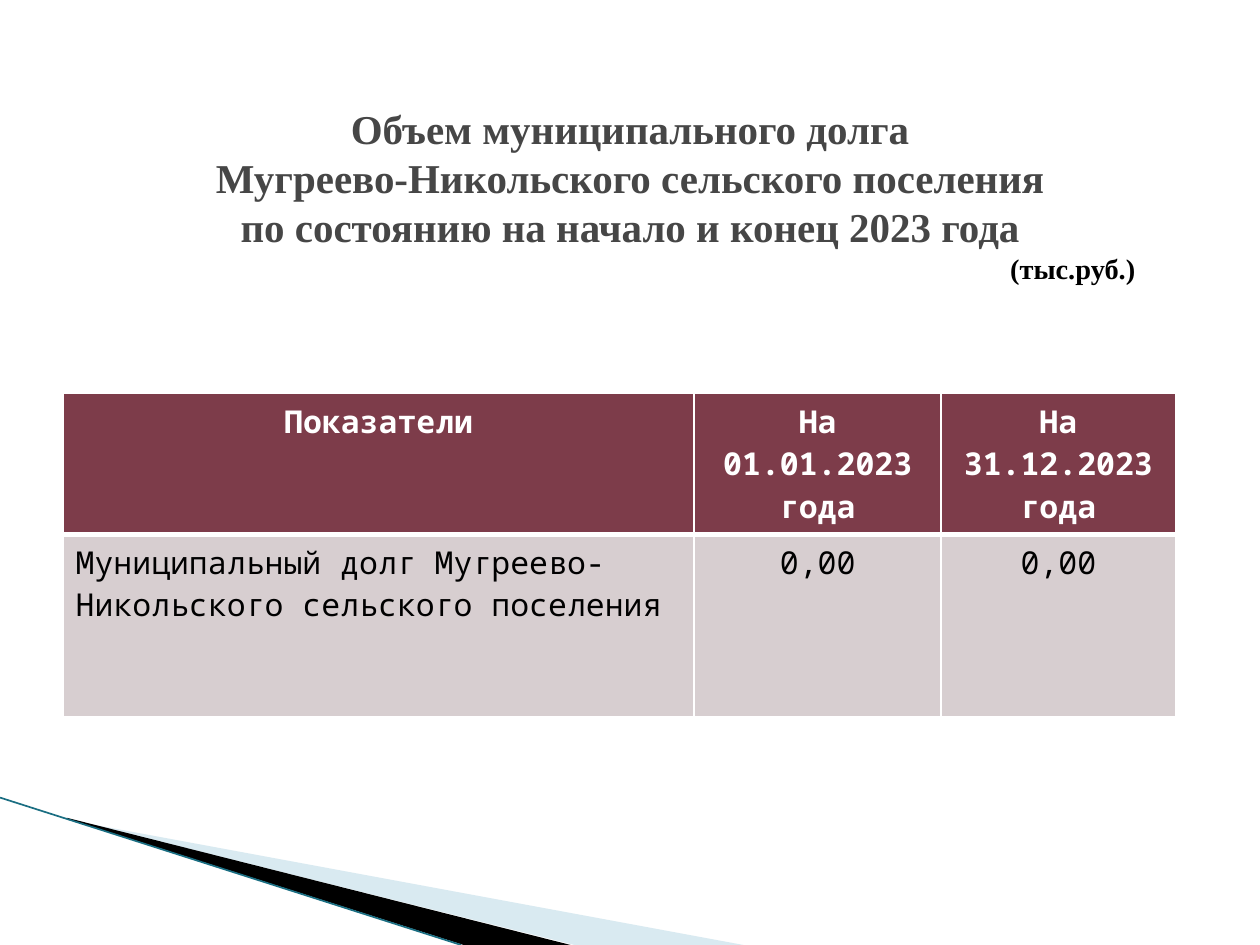
from dataclasses import dataclass

from lxml.etree import SubElement
from pptx import Presentation
from pptx.dml.color import RGBColor
from pptx.enum.shapes import MSO_CONNECTOR
from pptx.enum.text import MSO_ANCHOR, PP_ALIGN
from pptx.oxml.ns import qn
from pptx.util import Inches, Pt

SERIF, MONO = "Times New Roman", "Noto Sans Mono"
WHITE, BLACK, GREY = "FFFFFF", "000000", "464646"


@dataclass
class Wedge:
    points: list[tuple[float, float]]
    color: str
    opacity: int = 100


@dataclass
class Row:
    cells: list[str]
    height: float
    fill: str
    color: str
    bold: bool
    first_align: PP_ALIGN
    bottom_border: float


@dataclass
class TitleLine:
    text: str
    size: float = 23.4
    color: str = GREY
    align: PP_ALIGN = PP_ALIGN.CENTER


WEDGES = [
    Wedge([(0.55, 6.51), (5.9, 7.5), (4.56, 7.5), (0.55, 6.5)], "A0CBDC", 40),
    Wedge([(0.53, 6.49), (4.53, 7.5), (3.68, 7.5), (0.54, 6.5)], BLACK),
]
TITLE = [
    TitleLine("Объем муниципального долга"),
    TitleLine("Мугреево-Никольского сельского поселения"),
    TitleLine("по состоянию на начало и конец 2023 года"),
    TitleLine("(тыс.руб.)", 16.2, BLACK, PP_ALIGN.RIGHT),
]
COLUMN_WIDTHS = [5.01, 1.96, 1.86]
ROWS = [
    Row(["Показатели", "На 01.01.2023 года", "На 31.12.2023 года"],
        1.12, "7D3C4A", WHITE, True, PP_ALIGN.CENTER, 3),
    Row(["Муниципальный долг Мугреево-Никольского сельского поселения", "0,00", "0,00"],
        1.45, "D7CED0", BLACK, False, PP_ALIGN.LEFT, 1),
]


def rgb(color: str) -> RGBColor:
    return RGBColor.from_string(color)


def style(paragraph, face: str, size: float, color: str, bold: bool, align: PP_ALIGN) -> None:
    paragraph.alignment = align
    for run in paragraph.runs:
        font = run.font
        font.name, font.size, font.bold = face, Pt(size), bold
        font.color.rgb = rgb(color)


def draw_wedge(slide, wedge: Wedge) -> None:
    points = [(Inches(x), Inches(y)) for x, y in wedge.points]
    builder = slide.shapes.build_freeform(*points[0])
    builder.add_line_segments(points[1:])
    shape = builder.convert_to_shape()
    shape.shadow.inherit = False
    shape.line.fill.background()
    shape.fill.solid()
    shape.fill.fore_color.rgb = rgb(wedge.color)
    if wedge.opacity < 100:
        tint = shape.fill._xPr.find(".//" + qn("a:srgbClr"))
        SubElement(tint, qn("a:alpha"), val=str(wedge.opacity * 1000))


def draw_edge(slide) -> None:
    edge = slide.shapes.add_connector(
        MSO_CONNECTOR.STRAIGHT, Inches(0), Inches(6.33), Inches(3.66), Inches(7.5))
    edge.line.color.rgb = rgb("1A6E82")
    edge.line.width = Pt(0.95)
    SubElement(edge._element.spPr, qn("a:effectLst"))


def draw_title(slide) -> None:
    frame = slide.shapes.add_textbox(Inches(0.5), Inches(0.77), Inches(9), Inches(1.96)).text_frame
    frame.word_wrap = True
    frame.vertical_anchor = MSO_ANCHOR.TOP
    frame.margin_left = frame.margin_right = Inches(0.49)
    frame.margin_top = Inches(0.05)
    frame.text = "\n".join(line.text for line in TITLE)
    for paragraph, line in zip(frame.paragraphs, TITLE):
        style(paragraph, SERIF, line.size, line.color, True, line.align)


def set_borders(cell, bottom: float) -> None:
    properties = cell._tc.get_or_add_tcPr()
    for side, width in (("L", 1), ("R", 1), ("T", 1), ("B", bottom)):
        border = SubElement(properties, qn(f"a:ln{side}"), w=str(Pt(width)))
        fill = SubElement(border, qn("a:solidFill"))
        SubElement(fill, qn("a:srgbClr"), val=WHITE)


def draw_table(slide) -> None:
    table = slide.shapes.add_table(
        len(ROWS), len(COLUMN_WIDTHS), Inches(0.5), Inches(3.12),
        Inches(sum(COLUMN_WIDTHS)), Inches(sum(row.height for row in ROWS))).table
    for column, width in zip(table.columns, COLUMN_WIDTHS):
        column.width = Inches(width)
    for table_row, row in zip(table.rows, ROWS):
        table_row.height = Inches(row.height)
        for index, (cell, text) in enumerate(zip(table_row.cells, row.cells)):
            cell.text_frame.text = text
            align = PP_ALIGN.CENTER if index else row.first_align
            style(cell.text_frame.paragraphs[0], MONO, 18, row.color, row.bold, align)
            set_borders(cell, row.bottom_border)
            cell.fill.solid()
            cell.fill.fore_color.rgb = rgb(row.fill)


def main() -> None:
    deck = Presentation()
    deck.slide_width, deck.slide_height = Inches(10), Inches(7.5)
    slide = deck.slides.add_slide(deck.slide_layouts[6])
    # Corner decoration
    for wedge in WEDGES:
        draw_wedge(slide, wedge)
    draw_edge(slide)
    # Heading with its unit of measure
    draw_title(slide)
    # Debt at the start and end of the year
    draw_table(slide)
    deck.save("out.pptx")


if __name__ == "__main__":
    main()
